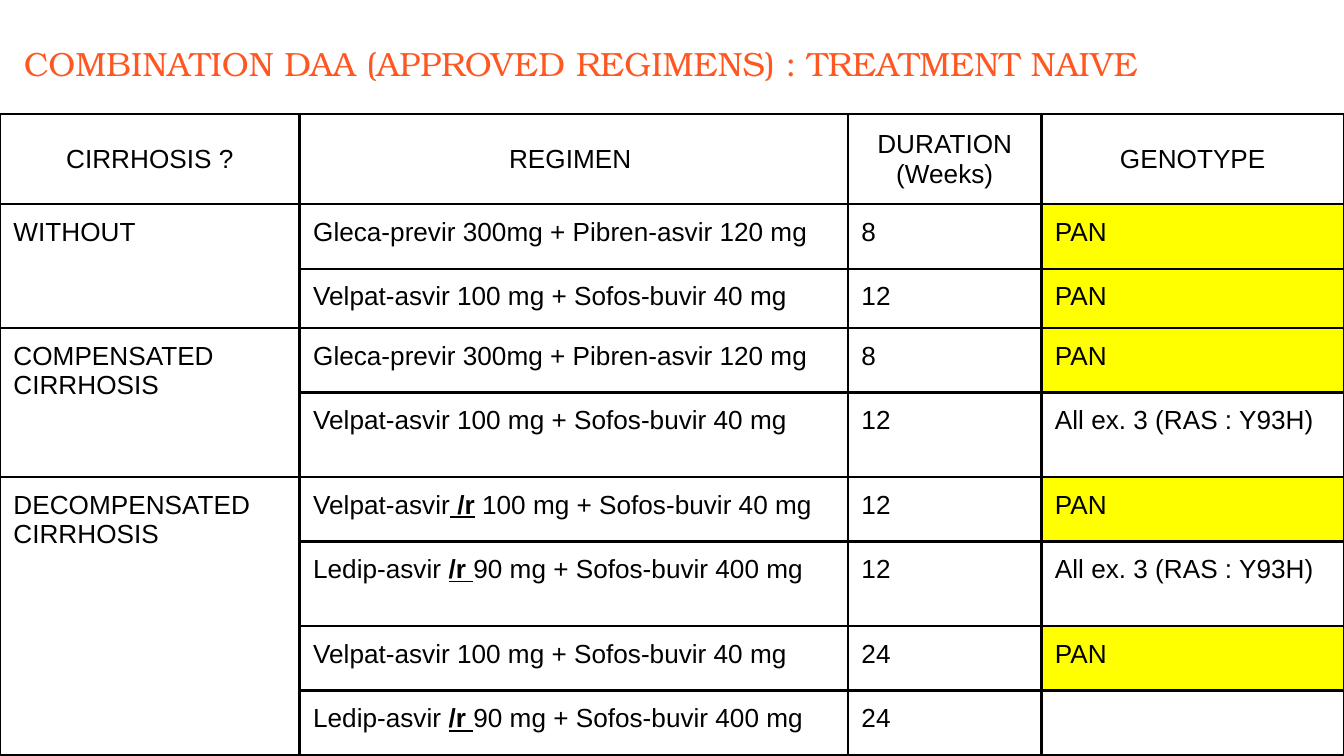
"""Build a slide with a table of approved DAA regimens for treatment-naive patients."""
from lxml.etree import SubElement
from pptx import Presentation
from pptx.dml.color import RGBColor
from pptx.enum.text import MSO_ANCHOR, PP_ALIGN
from pptx.oxml.ns import qn
from pptx.util import Inches, Pt

ORANGE = RGBColor(0xFF, 0x57, 0x22)
BLACK = RGBColor(0x00, 0x00, 0x00)
YELLOW = RGBColor(0xFF, 0xFF, 0x00)

COLUMN_WIDTHS = [2.23, 4.08, 1.44, 2.25]
ROW_HEIGHTS = [0.67, 0.48, 0.44, 0.48, 0.63, 0.48, 0.63, 0.48, 0.48]
TABLE_TOP = 0.85
MARGIN = Inches(0.1)

GLECAPREVIR = ["Gleca-previr 300mg + Pibren-asvir 120 mg"]
VELPATASVIR = ["Velpat-asvir 100 mg + Sofos-buvir 40 mg"]
VELPATASVIR_R = ["Velpat-asvir", " /r", " 100 mg + Sofos-buvir 40 mg"]
LEDIPASVIR_R = ["Ledip-asvir ", "/r ", "90 mg + Sofos-buvir 400 mg"]
PAN = ["PAN"]
EXCEPT_3 = ["All ex. 3 (RAS : Y93H)"]

ROWS = [
    (["CIRRHOSIS ?"], ["REGIMEN "], ["DURATION (Weeks)"], ["GENOTYPE"]),
    (["WITHOUT"], GLECAPREVIR, ["8"], PAN),
    ([], VELPATASVIR, ["12"], PAN),
    (["COMPENSATED CIRRHOSIS"], GLECAPREVIR, ["8"], PAN),
    ([], VELPATASVIR, ["12"], EXCEPT_3),
    (["DECOMPENSATED CIRRHOSIS"], VELPATASVIR_R, ["12"], PAN),
    ([], LEDIPASVIR_R, ["12"], EXCEPT_3),
    ([], VELPATASVIR, ["24"], PAN),
    ([], LEDIPASVIR_R, ["24"], []),
]
CIRRHOSIS_GROUPS = [(1, 2), (3, 4), (5, 8)]


def add_run(paragraph, text, font_name, size, color):
    run = paragraph.add_run()
    run.text = text
    run.font.name = font_name
    run.font.size = Pt(size)
    run.font.color.rgb = color
    return run


def add_borders(cell):
    properties = cell._tc.get_or_add_tcPr()
    for position, side in enumerate(("lnL", "lnR", "lnT", "lnB")):
        line = SubElement(properties, qn(f"a:{side}"), w=str(Pt(1.5)))
        fill = SubElement(line, qn("a:solidFill"))
        SubElement(fill, qn("a:srgbClr"), val=str(BLACK))
        properties.insert(position, line)


presentation = Presentation()
presentation.slide_width = Inches(10)
presentation.slide_height = presentation.slide_width * 9 // 16
slide = presentation.slides.add_slide(presentation.slide_layouts[6])

title = slide.shapes.add_textbox(0, Inches(0.22), presentation.slide_width, Inches(0.63))
title_frame = title.text_frame
title_frame.word_wrap = True
title_frame.margin_left = title_frame.margin_right = MARGIN
title_frame.margin_top = title_frame.margin_bottom = MARGIN
add_run(title_frame.paragraphs[0], " COMBINATION DAA (APPROVED REGIMENS) : TREATMENT NAIVE",
        "TeX Gyre Bonum", 18, ORANGE)

table = slide.shapes.add_table(
    len(ROWS), len(COLUMN_WIDTHS), 0, Inches(TABLE_TOP),
    Inches(sum(COLUMN_WIDTHS)), Inches(sum(ROW_HEIGHTS))).table
table.first_row = False
table.horz_banding = False
for column, width in zip(table.columns, COLUMN_WIDTHS):
    column.width = Inches(width)
for row, height in zip(table.rows, ROW_HEIGHTS):
    row.height = Inches(height)

for row_index, values in enumerate(ROWS):
    for column_index, pieces in enumerate(values):
        cell = table.cell(row_index, column_index)
        cell.margin_left = cell.margin_right = cell.margin_top = cell.margin_bottom = MARGIN
        if pieces == PAN:
            cell.fill.solid()
            cell.fill.fore_color.rgb = YELLOW
        else:
            cell.fill.background()
        add_borders(cell)
        paragraph = cell.text_frame.paragraphs[0]
        if row_index == 0:
            cell.vertical_anchor = MSO_ANCHOR.MIDDLE
            paragraph.alignment = PP_ALIGN.CENTER
        for piece_index, piece in enumerate(pieces):
            run = add_run(paragraph, piece, "Arial", 14, BLACK)
            run.font.bold = run.font.underline = piece_index == 1
        if not pieces:
            SubElement(paragraph._p, qn("a:endParaRPr"), sz="1400")

for first_row, last_row in CIRRHOSIS_GROUPS:
    table.cell(first_row, 0).merge(table.cell(last_row, 0))

presentation.save("out.pptx")
